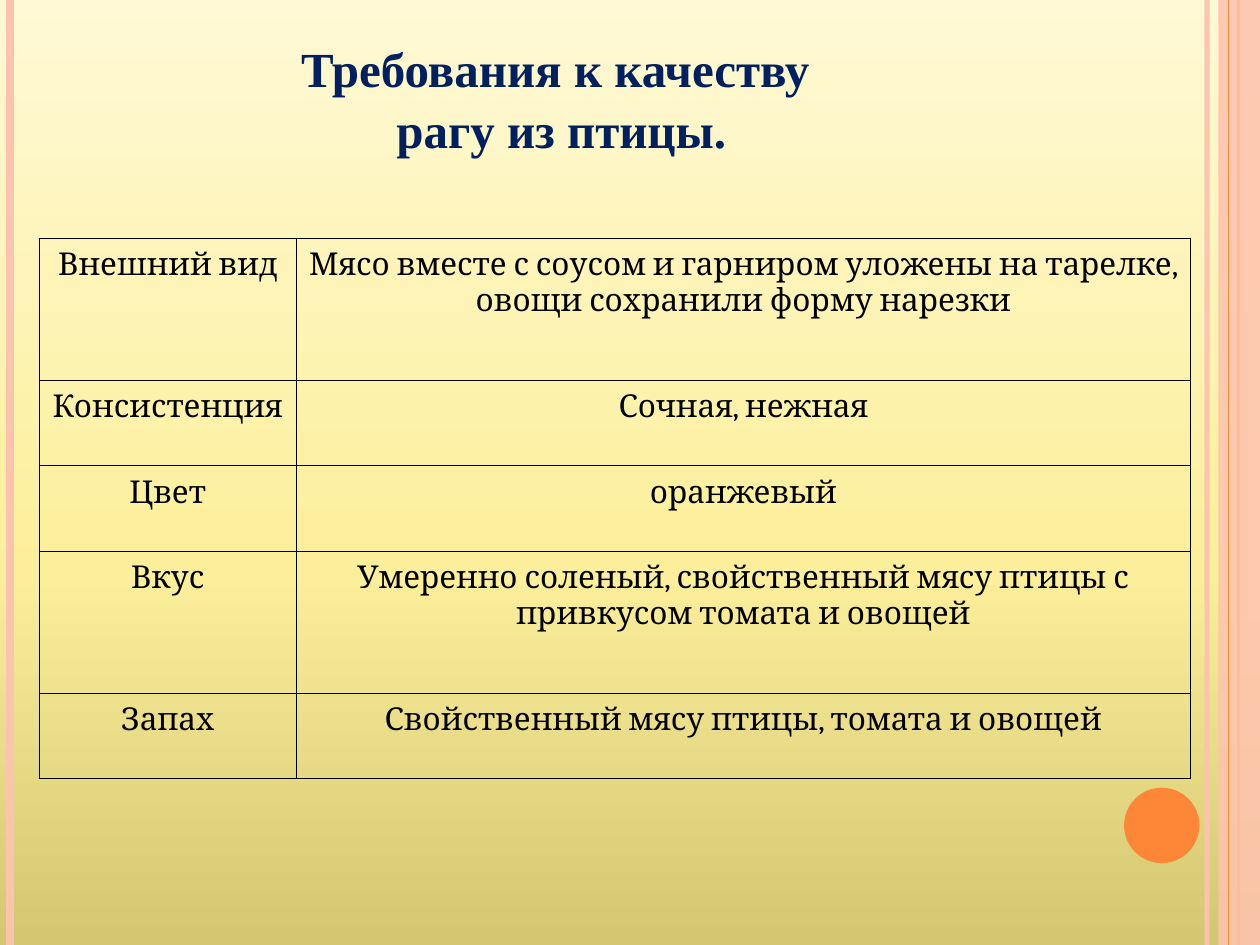
import copy
from dataclasses import dataclass
from typing import Optional

import pptx
import pptx.dml.color
import pptx.enum.shapes
import pptx.enum.text
import pptx.oxml.ns
import pptx.oxml.xmlchemy
import pptx.util
from pptx.util import Cm

RGB = pptx.dml.color.RGBColor.from_string
qn = pptx.oxml.ns.qn
new_element = pptx.oxml.xmlchemy.OxmlElement
CENTER = pptx.enum.text.PP_ALIGN.CENTER
TOP = pptx.enum.text.MSO_ANCHOR.TOP


@dataclass(frozen=True)
class Theme:
    peach: str = "FEC3AE"
    orange: str = "FE8637"
    navy: str = "002060"
    black: str = "000000"
    backdrop: tuple = ((0, "D3C772"), (0.4, "FCEF9B"), (1, "FFF9D5"))
    title_font: str = "Times New Roman"
    table_font: str = "Cambria"
    title_size: int = 28
    table_size: int = 18
    border: float = 0.75


@dataclass(frozen=True)
class Stripe:
    x: float
    color: str
    weight: float
    opacity: Optional[int] = None


@dataclass(frozen=True)
class Requirement:
    quality: str
    description: str
    height: float


THEME = Theme()
WIDTH, HEIGHT = 25.4, 19.05

RIGHT_EDGE = Stripe(24.33, THEME.peach, 3, 93)
LEFT_EDGE = Stripe(0.2, THEME.peach, 4.5)
BAND_LEFT = Stripe(24.97, THEME.orange, 1.5)
BAND_INNER = Stripe(24.77, THEME.orange, 0.75)

REQUIREMENTS = [
    Requirement("Внешний вид", "Мясо вместе с соусом и гарниром уложены на тарелке, "
                "овощи сохранили форму нарезки", 2.87),
    Requirement("Консистенция", "Сочная, нежная", 1.72),
    Requirement("Цвет", "оранжевый", 1.72),
    Requirement("Вкус", "Умеренно соленый, свойственный мясу птицы с "
                "привкусом томата и овощей", 2.87),
    Requirement("Запах", "Свойственный мясу птицы, томата и овощей", 1.72),
]


def paint_backdrop(slide) -> None:
    fill = slide.background.fill
    fill.gradient()
    fill.gradient_angle = 90
    stops = slide.element.find(f".//{qn('a:gsLst')}")
    stops.append(copy.deepcopy(stops[-1]))
    for stop, (position, color) in zip(fill.gradient_stops, THEME.backdrop):
        stop.position = position
        stop.color.rgb = RGB(color)


def set_opacity(shape, percent: int) -> None:
    color = shape.element.spPr.find(f".//{qn('a:srgbClr')}")
    alpha = new_element("a:alpha")
    alpha.set("val", str(percent * 1000))
    color.append(alpha)


def draw_stripe(slide, stripe: Stripe) -> None:
    line = slide.shapes.add_connector(
        pptx.enum.shapes.MSO_CONNECTOR.STRAIGHT,
        Cm(stripe.x), Cm(0), Cm(stripe.x), Cm(HEIGHT))
    line.line.color.rgb = RGB(stripe.color)
    line.line.width = pptx.util.Pt(stripe.weight)
    if stripe.opacity is not None:
        set_opacity(line, stripe.opacity)
    line.element.spPr.append(new_element("a:effectLst"))


def draw_plain(slide, kind, left: float, top: float, width: float, height: float,
               color: str):
    shape = slide.shapes.add_shape(kind, Cm(left), Cm(top), Cm(width), Cm(height))
    shape.shadow.inherit = False
    shape.fill.solid()
    shape.fill.fore_color.rgb = RGB(color)
    shape.line.fill.background()
    return shape


def format_paragraph(paragraph, font: str, size: int, color: str, bold: bool) -> None:
    paragraph.alignment = CENTER
    paragraph.font.name = font
    paragraph.font.size = pptx.util.Pt(size)
    paragraph.font.bold = bold
    paragraph.font.color.rgb = RGB(color)


def write_title(slide) -> None:
    title = slide.shapes.title
    title.left, title.top, title.width, title.height = Cm(0), Cm(0.58), Cm(22.63), Cm(3.84)
    frame = title.text_frame
    frame.text = "Требования к качеству \nрагу из птицы."
    frame.word_wrap = True
    frame.auto_size = pptx.enum.text.MSO_AUTO_SIZE.NONE
    frame.vertical_anchor = TOP
    for paragraph in frame.paragraphs:
        format_paragraph(paragraph, THEME.title_font, THEME.title_size, THEME.navy, True)
        paragraph.line_spacing = 1.05
        paragraph.space_before = pptx.util.Pt(0)


def border_cell(cell) -> None:
    properties = cell._tc.get_or_add_tcPr()
    for index, side in enumerate(("lnL", "lnR", "lnT", "lnB")):
        edge = new_element(f"a:{side}")
        edge.set("w", str(pptx.util.Pt(THEME.border)))
        solid = new_element("a:solidFill")
        color = new_element("a:srgbClr")
        color.set("val", THEME.black)
        solid.append(color)
        edge.append(solid)
        properties.insert(index, edge)


def fill_cell(cell, text: str) -> None:
    cell.text = text
    cell.fill.background()
    cell.vertical_anchor = TOP
    cell.margin_left = cell.margin_right = cell.margin_top = cell.margin_bottom = Cm(0.18)
    format_paragraph(cell.text_frame.paragraphs[0], THEME.table_font,
                     THEME.table_size, THEME.black, False)
    border_cell(cell)


def draw_requirements(slide) -> None:
    column_widths = (5.18, 18.03)
    table = slide.shapes.add_table(
        len(REQUIREMENTS), len(column_widths), Cm(0.79), Cm(4.8),
        Cm(sum(column_widths)), Cm(sum(r.height for r in REQUIREMENTS))).table
    table.first_row = table.horz_banding = False
    for column, width in zip(table.columns, column_widths):
        column.width = Cm(width)
    for row, requirement in zip(table.rows, REQUIREMENTS):
        row.height = Cm(requirement.height)
        for cell, text in zip(row.cells, (requirement.quality, requirement.description)):
            fill_cell(cell, text)


def main() -> None:
    presentation = pptx.Presentation()
    presentation.slide_width, presentation.slide_height = Cm(WIDTH), Cm(HEIGHT)
    slide = presentation.slides.add_slide(presentation.slide_layouts[5])
    shapes = pptx.enum.shapes.MSO_SHAPE

    paint_backdrop(slide)
    for stripe in (RIGHT_EDGE, LEFT_EDGE, BAND_LEFT):
        draw_stripe(slide, stripe)
    band = draw_plain(slide, shapes.RECTANGLE, 24.56, 0, 0.84, HEIGHT, THEME.peach)
    set_opacity(band, 87)
    draw_stripe(slide, BAND_INNER)
    draw_plain(slide, shapes.OVAL, 22.66, 15.88, 1.52, 1.52, THEME.orange)
    draw_requirements(slide)
    write_title(slide)
    presentation.save("out.pptx")


if __name__ == "__main__":
    main()
